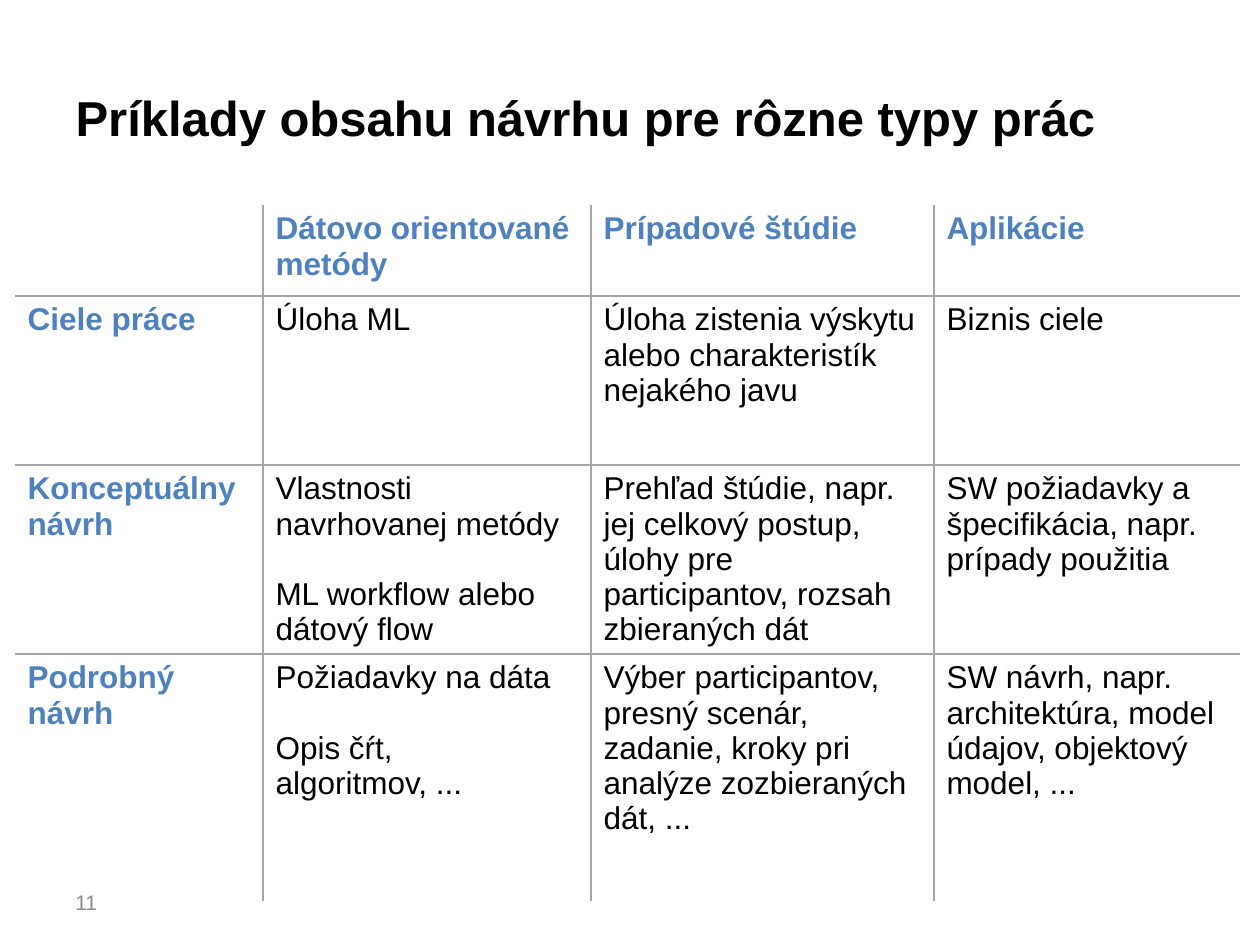
from dataclasses import dataclass

from lxml import etree
from pptx import Presentation
from pptx.dml.color import RGBColor
from pptx.enum.text import MSO_ANCHOR, PP_ALIGN
from pptx.oxml.ns import qn
from pptx.util import Emu, Pt

LEFT = PP_ALIGN.LEFT
TOP, MIDDLE = MSO_ANCHOR.TOP, MSO_ANCHOR.MIDDLE
TITLE_ONLY_LAYOUT = 5
EMU_PER_PX = 914400 / 126


@dataclass(frozen=True)
class Theme:
    font: str = "Arial"
    text: str = "000000"
    heading: str = "4F81BD"
    page_number: str = "8C8C8C"
    rule: str = "A6A6A6"
    title_size: int = 28
    cell_size: int = 18
    page_number_size: int = 12
    paragraph_gap: int = 20
    rule_width: int = 1


@dataclass(frozen=True)
class Box:
    left: int
    top: int
    width: int
    height: int


@dataclass(frozen=True)
class TextStyle:
    size: int
    color: str
    bold: bool = False


THEME = Theme()
TITLE_STYLE = TextStyle(THEME.title_size, THEME.text, True)
HEADING_STYLE = TextStyle(THEME.cell_size, THEME.heading, True)
BODY_STYLE = TextStyle(THEME.cell_size, THEME.text)
NUMBER_STYLE = TextStyle(THEME.page_number_size, THEME.page_number)

TITLE_BOX = Box(63, 38, 1134, 157)
NUMBER_BOX = Box(63, 877, 294, 50)
TABLE_LEFT, TABLE_TOP = 15, 205
COLUMN_WIDTHS = (248, 328, 343, 306)
ROW_HEIGHTS = (91, 169, 169, 247)

# Each line within a cell is a paragraph of its own
TABLE_ROWS = (
    ("", "Dátovo orientované metódy", "Prípadové štúdie", "Aplikácie"),
    ("Ciele práce", "Úloha ML",
     "Úloha zistenia výskytu alebo charakteristík nejakého javu",
     "Biznis ciele"),
    ("Konceptuálny návrh",
     "Vlastnosti navrhovanej metódy\nML workflow alebo dátový flow",
     "Prehľad štúdie, napr. jej celkový postup, úlohy pre participantov, "
     "rozsah zbieraných dát",
     "SW požiadavky a špecifikácia, napr. prípady použitia"),
    ("Podrobný návrh",
     "Požiadavky na dáta\nOpis čŕt, algoritmov, ...",
     "Výber participantov, presný scenár, zadanie, kroky pri analýze "
     "zozbieraných dát, ...",
     "SW návrh, napr. architektúra, model údajov, objektový model, ..."),
)


def px(length: int) -> Emu:
    return Emu(round(length * EMU_PER_PX))


def place(box: Box) -> tuple[Emu, Emu, Emu, Emu]:
    return px(box.left), px(box.top), px(box.width), px(box.height)


def write_text(text_frame, text: str, style: TextStyle) -> None:
    text_frame.text = text
    text_frame.word_wrap = True
    for index, paragraph in enumerate(text_frame.paragraphs):
        paragraph.alignment = LEFT
        paragraph.space_before = Pt(THEME.paragraph_gap if index else 0)
        font = paragraph.font
        font.name = THEME.font
        font.size = Pt(style.size)
        font.bold = style.bold
        font.color.rgb = RGBColor.from_string(style.color)


def set_borders(cell, visible: dict[str, bool]) -> None:
    """Draw the sides marked True and clear the others."""
    properties = cell._tc.get_or_add_tcPr()
    for index, (side, shown) in enumerate(visible.items()):
        line = etree.Element(qn(f"a:ln{side}"), w=str(Pt(THEME.rule_width)))
        if shown:
            fill = etree.SubElement(line, qn("a:solidFill"))
            etree.SubElement(fill, qn("a:srgbClr"), val=THEME.rule)
        else:
            etree.SubElement(line, qn("a:noFill"))
        properties.insert(index, line)


def add_comparison_table(slide) -> None:
    row_count, column_count = len(ROW_HEIGHTS), len(COLUMN_WIDTHS)
    box = Box(TABLE_LEFT, TABLE_TOP, sum(COLUMN_WIDTHS), sum(ROW_HEIGHTS))
    table = slide.shapes.add_table(row_count, column_count, *place(box)).table
    table.first_row = table.horz_banding = False
    for column, width in zip(table.columns, COLUMN_WIDTHS):
        column.width = px(width)
    for row, height in zip(table.rows, ROW_HEIGHTS):
        row.height = px(height)

    # Headings run along the first row and column; only inner rules show
    for row, texts in enumerate(TABLE_ROWS):
        for column, text in enumerate(texts):
            cell = table.cell(row, column)
            is_heading = row == 0 or column == 0
            write_text(cell.text_frame, text,
                       HEADING_STYLE if is_heading else BODY_STYLE)
            cell.vertical_anchor = TOP
            cell.fill.background()
            set_borders(cell, {
                "L": column > 0,
                "R": column < column_count - 1,
                "T": row > 0,
                "B": row < row_count - 1,
            })


def main() -> None:
    presentation = Presentation()
    presentation.slide_width = px(1260)
    presentation.slide_height = px(945)
    layout = presentation.slide_layouts[TITLE_ONLY_LAYOUT]
    slide = presentation.slides.add_slide(layout)

    # Title
    title = slide.shapes.title
    title.left, title.top, title.width, title.height = place(TITLE_BOX)
    write_text(title.text_frame, "Príklady obsahu návrhu pre rôzne typy prác",
               TITLE_STYLE)
    title.text_frame.vertical_anchor = MIDDLE

    # Table
    add_comparison_table(slide)

    # Page number
    number = slide.shapes.add_textbox(*place(NUMBER_BOX))
    write_text(number.text_frame, "11", NUMBER_STYLE)
    number.text_frame.vertical_anchor = MIDDLE

    presentation.save("out.pptx")


if __name__ == "__main__":
    main()
